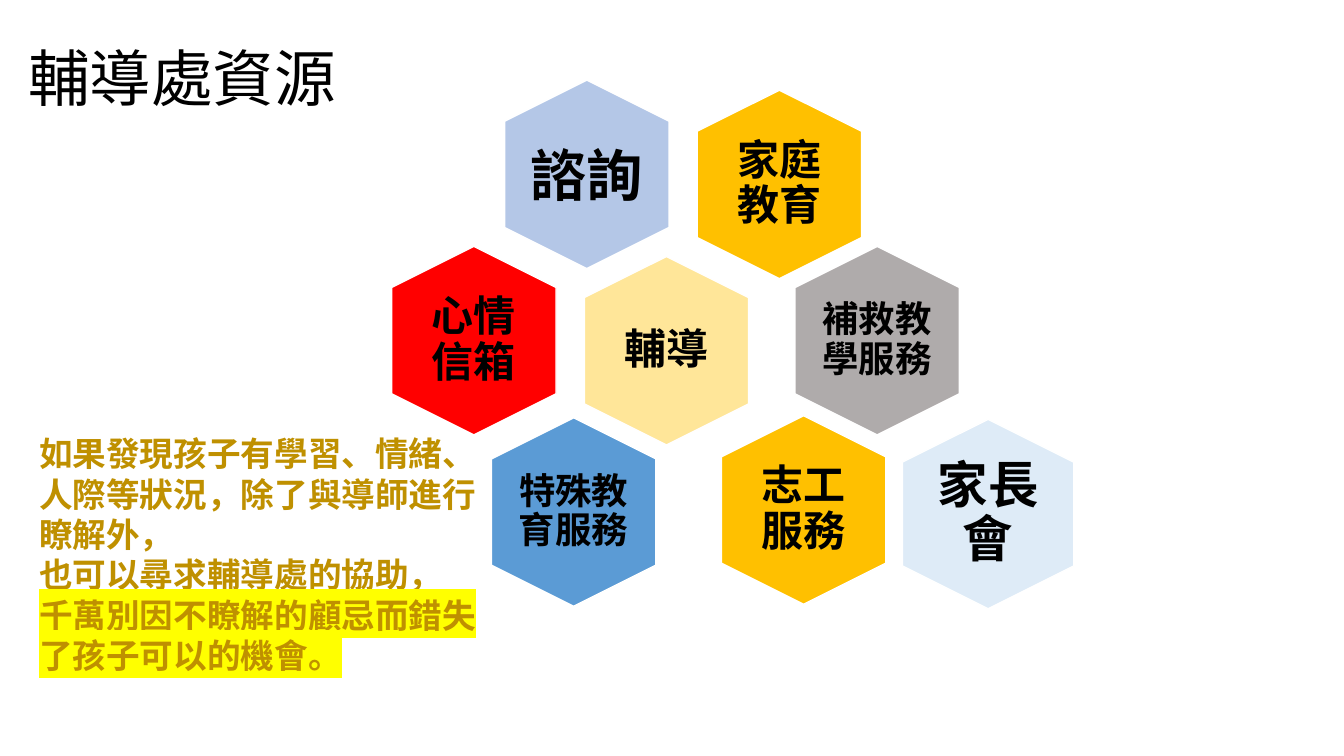
from dataclasses import dataclass

from lxml.etree import SubElement
from pptx import Presentation
from pptx.dml.color import RGBColor
from pptx.enum.shapes import MSO_SHAPE
from pptx.enum.text import MSO_ANCHOR, MSO_AUTO_SIZE, PP_ALIGN
from pptx.oxml.ns import qn
from pptx.util import Inches, Pt


@dataclass(frozen=True)
class Theme:
    font: str = "Calibri"
    advice_font: str = "Noto Sans CJK SC"
    black: str = "000000"
    white: str = "FFFFFF"
    gold: str = "FFC000"
    dark_gold: str = "BF9000"
    pale_gold: str = "FFE699"
    soft_blue: str = "B4C7E7"
    blue: str = "5B9BD5"
    pale_blue: str = "DEEBF7"
    gray: str = "AFABAB"
    red: str = "FF0000"
    highlight: str = "FFFF00"
    title_size: int = 44
    advice_size: int = 24
    huge: int = 40
    large: int = 36
    medium: int = 30
    small: int = 26


theme = Theme()


def add_text(left, top, width, height, text, size, color=theme.black, font=theme.font,
             bold=True, spacing=0.9, anchor=MSO_ANCHOR.MIDDLE):
    box = slide.shapes.add_textbox(Inches(left), Inches(top), Inches(width), Inches(height))
    frame = box.text_frame
    frame.word_wrap = True
    frame.vertical_anchor = anchor
    paragraph = frame.paragraphs[0]
    paragraph.text = text
    paragraph.line_spacing = spacing
    paragraph.font.name = font
    paragraph.font.size = Pt(size)
    paragraph.font.bold = bold
    paragraph.font.color.rgb = RGBColor.from_string(color)
    return frame


presentation = Presentation()
presentation.slide_width = Inches(13.33)
presentation.slide_height = Inches(7.5)
slide = presentation.slides.add_slide(presentation.slide_layouts[6])

# Title
add_text(0.18, 0.18, 3.93, 1.25, "輔導處資源", theme.title_size, bold=False)

# Honeycomb of services: label, centre x, centre y, fill, type size, inset, line spacing
services = [
    ("家庭教育", 7.73, 1.83, theme.gold, theme.medium, 0.12, 0.9),
    ("諮詢", 5.82, 1.73, theme.soft_blue, theme.huge, 0, 1.0),
    ("輔導", 6.61, 3.48, theme.pale_gold, theme.medium, 0.12, 0.9),
    ("補救教學服務", 8.7, 3.38, theme.gray, theme.small, 0, 0.9),
    ("志工服務", 7.97, 5.06, theme.gold, theme.medium, 0.12, 0.9),
    ("特殊教育服務", 5.69, 5.08, theme.blue, theme.small, 0, 0.9),
    ("心情信箱", 4.7, 3.38, theme.red, theme.medium, 0.12, 0.9),
    ("家長會", 9.8, 5.1, theme.pale_blue, theme.large, 0, 0.9),
]
label_width, label_height = 1.14, 1.29

for service, x, y, fill, size, inset, spacing in services:
    length, breadth = (1.88, 1.7) if service == "家長會" else (1.87, 1.63)
    hexagon = slide.shapes.add_shape(
        MSO_SHAPE.HEXAGON, Inches(x - length / 2), Inches(y - breadth / 2),
        Inches(length), Inches(breadth))
    hexagon.rotation = 90
    hexagon.adjustments[0] = 0.25
    hexagon.adjustments[1] = 1.155
    hexagon.shadow.inherit = False
    hexagon.fill.solid()
    hexagon.fill.fore_color.rgb = RGBColor.from_string(fill)
    hexagon.line.color.rgb = RGBColor.from_string(theme.white)
    hexagon.line.width = Pt(1)

    label = add_text(x - label_width / 2, y - label_height / 2, label_width, label_height,
                     service, size, spacing=spacing)
    label.margin_left = label.margin_right = Inches(inset)
    label.margin_top = label.margin_bottom = Inches(inset)
    label.paragraphs[0].alignment = PP_ALIGN.CENTER

# Advice to parents, with its last sentence highlighted
advice = add_text(
    0.29, 4.25, 4.67, 2.52,
    "如果發現孩子有學習、情緒、人際等狀況，除了與導師進行瞭解外，\v也可以尋求輔導處的協助，\v",
    theme.advice_size, theme.dark_gold, theme.advice_font, spacing=1.0, anchor=MSO_ANCHOR.TOP)
advice.auto_size = MSO_AUTO_SIZE.SHAPE_TO_FIT_TEXT
warning = advice.paragraphs[0].add_run()
warning.text = "千萬別因不瞭解的顧忌而錯失了孩子可以的機會。"
highlight = SubElement(warning.font._element, qn("a:highlight"))
SubElement(highlight, qn("a:srgbClr"), val=theme.highlight)

presentation.save("out.pptx")
